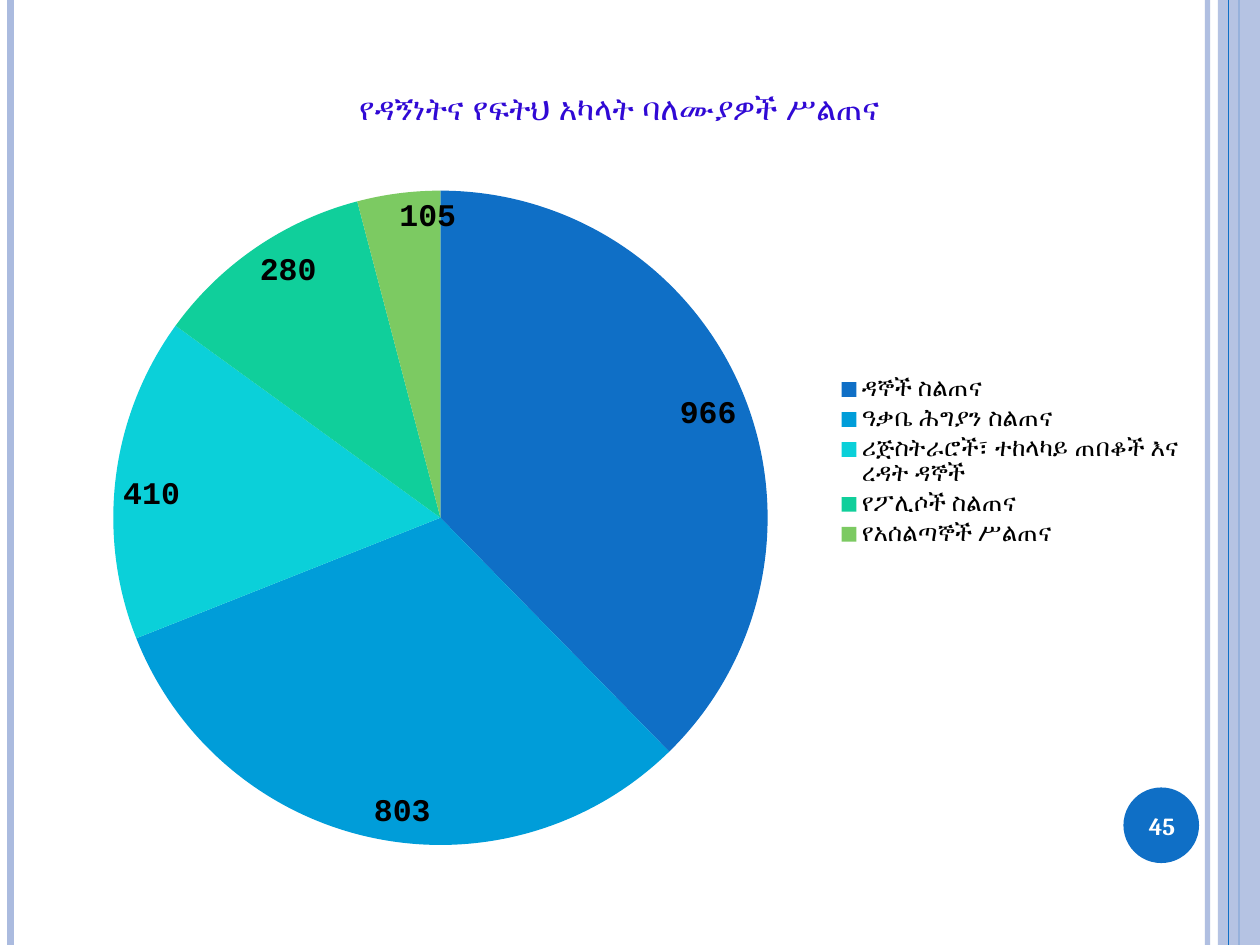
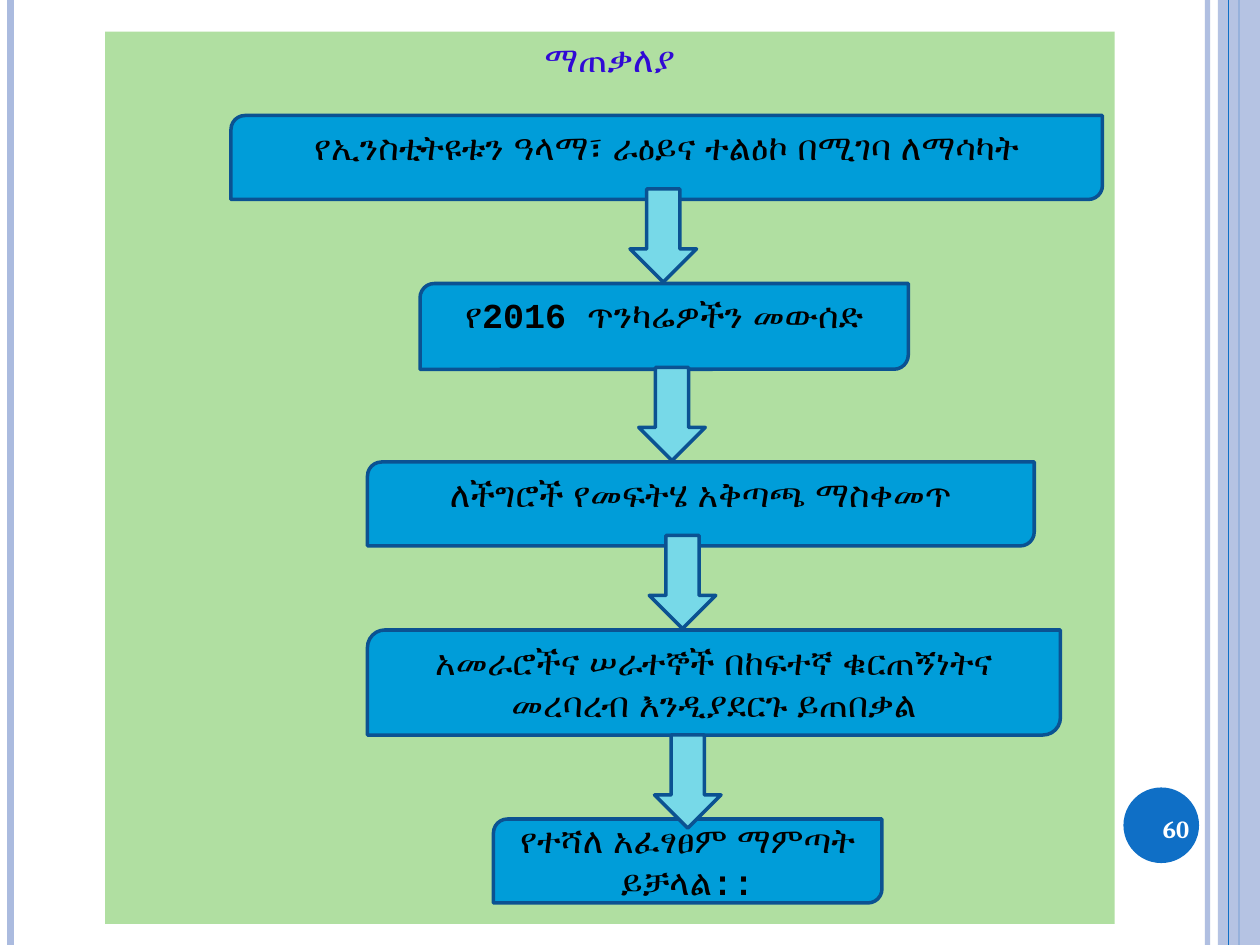
"""Builds two training slides: a pie chart of trainees and a concluding flow of steps."""
import dataclasses

import lxml.etree
import pptx
import pptx.chart.chart
import pptx.chart.data
import pptx.dml.color
import pptx.dml.fill
import pptx.enum.chart
import pptx.enum.shapes
import pptx.enum.text
import pptx.oxml
import pptx.oxml.ns
import pptx.shapes.autoshape
import pptx.slide
import pptx.text.text
import pptx.util

Pt = pptx.util.Pt
RGBColor = pptx.dml.color.RGBColor
Shape = pptx.enum.shapes.MSO_SHAPE
Anchor = pptx.enum.text.MSO_ANCHOR
qn = pptx.oxml.ns.qn

WHITE = RGBColor(0xFF, 0xFF, 0xFF)
BLACK = RGBColor(0x00, 0x00, 0x00)
PALE_BLUE = RGBColor(0xAB, 0xBB, 0xDF)
BLUE = RGBColor(0x0F, 0x6F, 0xC6)
SKY = RGBColor(0x00, 0x9D, 0xD9)
TURQUOISE = RGBColor(0x0B, 0xD0, 0xD9)
EMERALD = RGBColor(0x10, 0xCF, 0x9B)
LEAF = RGBColor(0x7C, 0xCA, 0x62)
PALE_GREEN = RGBColor(0xB0, 0xDF, 0xA1)
AQUA = RGBColor(0x77, 0xD9, 0xE8)
OUTLINE = RGBColor(0x0B, 0x52, 0x92)
TITLE_COLOR = RGBColor(0x30, 0x09, 0xD5)

BODY_FONT = "Courier New"
NUMBER_FONT = "Cambria"
PAGE_WIDTH, PAGE_HEIGHT = 720, 540
ARROW_WIDTH, ARROW_HEIGHT = 38, 53.3


@dataclasses.dataclass(frozen=True)
class Area:
    """A rectangle on the page, in points."""
    left: float
    top: float
    width: float
    height: float

    def lengths(self) -> tuple:
        """Return the four lengths for a python-pptx call."""
        return Pt(self.left), Pt(self.top), Pt(self.width), Pt(self.height)


@dataclasses.dataclass(frozen=True)
class Rule:
    """A vertical line over the full page height."""
    x: float
    weight: float
    color: RGBColor
    opacity: int = 100


@dataclasses.dataclass(frozen=True)
class Step:
    """One box of the flow."""
    text: str
    area: Area
    anchor: Anchor = Anchor.TOP


@dataclasses.dataclass(frozen=True)
class Slice:
    """One slice of the pie."""
    label: str
    value: int
    color: RGBColor


RULES_BEHIND_BAND = [
    Rule(690, 3, PALE_BLUE, 93),
    Rule(6, 4.5, PALE_BLUE),
    Rule(708, 1.5, BLUE),
]
RULE_OVER_BAND = Rule(702, 0.75, BLUE)
BAND = Area(696, 0, 24, PAGE_HEIGHT)
BADGE = Area(642, 450, 43.2, 43.2)

CHART_TITLE = "የዳኝነትና የፍትህ አካላት ባለሙያዎች ሥልጠና"
SLICES = [
    Slice("ዳኞች ስልጠና", 966, BLUE),
    Slice("ዓቃቤ ሕግያን ስልጠና", 803, SKY),
    Slice("ሪጅስትራሮች፣ ተከላካይ ጠበቆች እና ረዳት ዳኞች", 410, TURQUOISE),
    Slice("የፖሊሶች ስልጠና", 280, EMERALD),
    Slice("የአሰልጣኞች ሥልጠና", 105, LEAF),
]
PIE_LAYOUT = {"xMode": "edge", "yMode": "edge", "x": 0.06, "y": 0.16, "w": 0.57, "h": 0.82}

STEPS = [
    Step("የኢንስቲትዩቱን ዓላማ፣ ራዕይና ተልዕኮ በሚገባ ለማሳካት", Area(132, 66, 498, 48)),
    Step("የ2016 ጥንካሬዎችን መውሰድ", Area(240, 162, 279, 49)),
    Step("ለችግሮች የመፍትሄ አቅጣጫ ማስቀመጥ", Area(210, 264, 381, 48)),
    Step("አመራሮችና ሠራተኞች በከፍተኛ ቁርጠኝነትና መረባረብ እንዲያደርጉ ይጠበቃል",
         Area(210, 360, 396, 60), Anchor.MIDDLE),
    Step("የተሻለ አፈፃፀም ማምጣት ይቻላል::", Area(282, 468, 222, 48), Anchor.MIDDLE),
]
ARROW_CORNERS = [(360, 108), (365, 210), (371, 306), (374, 420)]


def set_font(font: pptx.text.text.Font, size: float, color: RGBColor = BLACK,
             name: str = BODY_FONT, bold: bool = True) -> None:
    """Set the typeface, size, weight and colour of a font."""
    font.name = name
    font.size = Pt(size)
    font.bold = bold
    font.color.rgb = color


def write_centered(frame: pptx.text.text.TextFrame, text: str, anchor: Anchor,
                   size: float = 20, color: RGBColor = BLACK, name: str = BODY_FONT) -> None:
    """Put one centred paragraph into a text frame."""
    frame.word_wrap = True
    frame.vertical_anchor = anchor
    para = frame.paragraphs[0]
    para.text = text
    para.alignment = pptx.enum.text.PP_ALIGN.CENTER
    set_font(para.font, size, color, name)


def set_opacity(fill: pptx.dml.fill.FillFormat, element: lxml.etree._Element,
                color: RGBColor, opacity: int) -> None:
    """Fill with a colour and make it partly transparent."""
    fill.solid()
    fill.fore_color.rgb = color
    if opacity < 100:
        color_node = next(element.iter(qn("a:srgbClr")))
        lxml.etree.SubElement(color_node, qn("a:alpha")).set("val", str(opacity * 1000))


def draw_rule(page: pptx.slide.Slide, rule: Rule) -> None:
    """Draw a full-height vertical line."""
    line = page.shapes.add_connector(pptx.enum.shapes.MSO_CONNECTOR.STRAIGHT,
                                     Pt(rule.x), Pt(0), Pt(rule.x), Pt(PAGE_HEIGHT))
    line.line.width = Pt(rule.weight)
    properties = line._element.spPr
    set_opacity(line.line.fill, properties, rule.color, rule.opacity)
    lxml.etree.SubElement(properties, qn("a:effectLst"))


def draw_shape(page: pptx.slide.Slide, kind: Shape, area: Area, color: RGBColor,
               outlined: bool = False, opacity: int = 100) -> pptx.shapes.autoshape.Shape:
    """Draw a flat preset shape."""
    shape = page.shapes.add_shape(kind, *area.lengths())
    shape.shadow.inherit = False
    set_opacity(shape.fill, shape._element.spPr, color, opacity)
    if outlined:
        shape.line.color.rgb = OUTLINE
        shape.line.width = Pt(2)
    else:
        shape.line.fill.background()
    return shape


def draw_frame(page: pptx.slide.Slide) -> None:
    """Draw the edge lines, side band and number badge."""
    for rule in RULES_BEHIND_BAND:
        draw_rule(page, rule)
    draw_shape(page, Shape.RECTANGLE, BAND, PALE_BLUE, opacity=87)
    draw_rule(page, RULE_OVER_BAND)
    draw_shape(page, Shape.OVAL, BADGE, BLUE)


def draw_number(page: pptx.slide.Slide, number: int, area: Area) -> None:
    """Write the slide number over the badge."""
    box = page.shapes.add_textbox(*area.lengths())
    write_centered(box.text_frame, str(number), Anchor.MIDDLE, 14, WHITE, NUMBER_FONT)


def place_pie(chart: pptx.chart.chart.Chart) -> None:
    """Fix the position of the pie within the chart."""
    plot_area = chart._chartSpace.chart.plotArea
    for old_layout in plot_area.findall(qn("c:layout")):
        plot_area.remove(old_layout)
    layout = lxml.etree.Element(qn("c:layout"))
    manual = lxml.etree.SubElement(layout, qn("c:manualLayout"))
    lxml.etree.SubElement(manual, qn("c:layoutTarget")).set("val", "inner")
    for key, value in PIE_LAYOUT.items():
        lxml.etree.SubElement(manual, qn(f"c:{key}")).set("val", str(value))
    plot_area.insert(0, layout)


def draw_pie(page: pptx.slide.Slide, area: Area) -> None:
    """Draw the pie chart of trainees with title, legend and labels."""
    data = pptx.chart.data.CategoryChartData()
    data.categories = [item.label for item in SLICES]
    data.add_series("Series 1", [item.value for item in SLICES])
    chart = page.shapes.add_chart(pptx.enum.chart.XL_CHART_TYPE.PIE,
                                  *area.lengths(), data).chart
    set_font(chart.font, 10, name=NUMBER_FONT, bold=False)

    chart.has_title = True
    para = chart.chart_title.text_frame.paragraphs[0]
    para.text = CHART_TITLE
    set_font(para.font, 18, TITLE_COLOR)

    chart.has_legend = True
    chart.legend.position = pptx.enum.chart.XL_LEGEND_POSITION.RIGHT
    chart.legend.include_in_layout = False
    set_font(chart.legend.font, 14, bold=False)

    plot = chart.plots[0]
    plot.vary_by_categories = True
    plot.has_data_labels = True
    plot.data_labels.show_value = True
    plot.data_labels.show_percentage = False
    plot.data_labels.position = pptx.enum.chart.XL_LABEL_POSITION.INSIDE_END
    set_font(plot.data_labels.font, 18)
    for index, item in enumerate(SLICES):
        fill = plot.series[0].points[index].format.fill
        fill.solid()
        fill.fore_color.rgb = item.color
    place_pie(chart)


def draw_conclusion(page: pptx.slide.Slide, area: Area) -> None:
    """Format the body placeholder as the green panel with its heading."""
    title = page.shapes.title
    title._element.getparent().remove(title._element)
    body = page.placeholders[1]
    body.left, body.top, body.width, body.height = area.lengths()
    body.fill.solid()
    body.fill.fore_color.rgb = PALE_GREEN
    para = body.text_frame.paragraphs[0]
    properties = para._p.get_or_add_pPr()
    properties.set("marL", "0")
    properties.set("indent", "0")
    lxml.etree.SubElement(properties, qn("a:buNone"))
    para.space_before = Pt(6)
    write_centered(body.text_frame, "ማጠቃለያ", Anchor.TOP, color=TITLE_COLOR)


def draw_flow(page: pptx.slide.Slide) -> None:
    """Draw the steps and the arrows between them."""
    for step in STEPS:
        box = draw_shape(page, Shape.ROUND_2_DIAG_RECTANGLE, step.area, SKY, outlined=True)
        write_centered(box.text_frame, step.text, step.anchor)
    for left, top in ARROW_CORNERS:
        draw_shape(page, Shape.DOWN_ARROW, Area(left, top, ARROW_WIDTH, ARROW_HEIGHT),
                   AQUA, outlined=True)


def main() -> None:
    """Build and save the deck."""
    deck = pptx.Presentation()
    deck.slide_width, deck.slide_height = Pt(PAGE_WIDTH), Pt(PAGE_HEIGHT)

    chart_page = deck.slides.add_slide(deck.slide_layouts[6])
    draw_frame(chart_page)
    draw_number(chart_page, 45, Area(640, 451.5, 48, 41))
    draw_pie(chart_page, Area(24, 36, 660, 456))

    flow_page = deck.slides.add_slide(deck.slide_layouts[1])
    draw_conclusion(flow_page, Area(60, 18, 577, 510))
    draw_frame(flow_page)
    draw_number(flow_page, 60, Area(648, 456, 48, 35))
    draw_flow(flow_page)

    deck.save("out.pptx")


if __name__ == "__main__":
    main()
